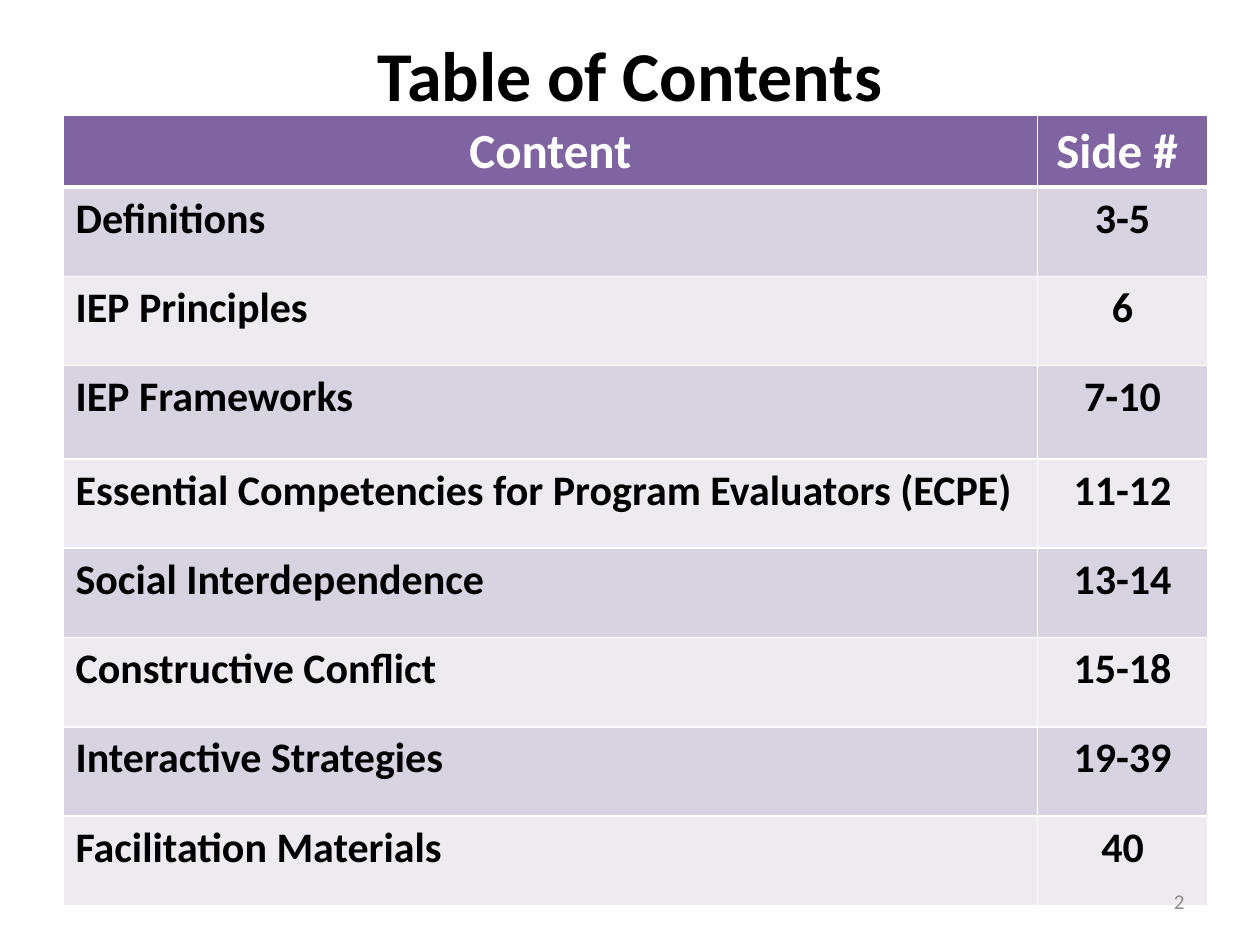
from pptx import Presentation
from pptx.dml.color import RGBColor
from pptx.enum.text import MSO_ANCHOR as Anchor, PP_ALIGN as Align
from pptx.util import Cm, Pt
from lxml.etree import SubElement
from pptx.oxml.ns import qn

# Content
TITLE = "Table of Contents"
PAGE_NUMBER = "2"
HEADER = ("Content", "Side # ")
ENTRIES = [
    ("Definitions", "3-5"),
    ("IEP Principles", "6"),
    ("IEP Frameworks", "7-10"),
    ("Essential Competencies for Program Evaluators (ECPE)", "11-12"),
    ("Social Interdependence", "13-14"),
    ("Constructive Conflict", "15-18"),
    ("Interactive Strategies", "19-39"),
    ("Facilitation Materials", "40"),
]

# Look
COLORS = {"black": "000000", "white": "FFFFFF", "gray": "8C8C8C",
          "header": "8064A2", "odd": "D8D3E0", "even": "EDEAF0"}
FORMATS = {
    "title": {"size": Pt(40), "bold": True, "color": "black"},
    "header": {"size": Pt(28), "bold": True, "color": "white"},
    "entry": {"size": Pt(24), "bold": True, "color": "black"},
    "number": {"size": Pt(12), "bold": False, "color": "gray"},
}
COLUMN_WIDTHS = (19.65, 3.42)
HEADER_HEIGHT, ENTRY_HEIGHT, TALL_HEIGHT = 1.43, 1.8, 1.88
TALL_ROW = 3


def rgb(name):
    return RGBColor.from_string(COLORS[name])


def write(frame, text, style, align):
    para = frame.paragraphs[0]
    para.alignment = align
    span = para.add_run()
    span.text = text
    span.font.name = "Calibri"
    for key, value in FORMATS[style].items():
        if key == "color":
            span.font.color.rgb = rgb(value)
        else:
            setattr(span.font, key, value)


def add_text(page, place, text, style, align):
    box = page.shapes.add_textbox(*map(Cm, place))
    box.text_frame.word_wrap = True
    box.text_frame.vertical_anchor = Anchor.MIDDLE
    write(box.text_frame, text, style, align)


def set_borders(cell, widths):
    props = cell._tc.get_or_add_tcPr()
    for position, (side, width) in enumerate(widths.items()):
        line = props.makeelement(qn(f"a:{side}"), {"w": str(Pt(width))})
        fill = SubElement(line, qn("a:solidFill"))
        SubElement(fill, qn("a:srgbClr"), val=COLORS["white"])
        props.insert(position, line)  # borders come before the fill


def add_contents(page):
    rows = [HEADER, *ENTRIES]
    heights = [HEADER_HEIGHT] + [ENTRY_HEIGHT] * len(ENTRIES)
    heights[TALL_ROW] = TALL_HEIGHT
    table = page.shapes.add_table(
        len(rows), len(HEADER), Cm(1.27), Cm(2.33),
        Cm(sum(COLUMN_WIDTHS)), Cm(sum(heights))).table
    for column, width in zip(table.columns, COLUMN_WIDTHS):
        column.width = Cm(width)

    for r, texts in enumerate(rows):
        table.rows[r].height = Cm(heights[r])
        style = "entry" if r else "header"
        shade = ("even", "odd")[r % 2] if r else "header"
        for c, text in enumerate(texts):
            cell = table.cell(r, c)
            cell.fill.solid()
            cell.fill.fore_color.rgb = rgb(shade)
            set_borders(cell, {"lnL": 1, "lnR": 1,
                               "lnT": 3 if r == 1 else 1,
                               "lnB": 1 if r else 3})
            align = Align.LEFT if r and c == 0 else Align.CENTER
            write(cell.text_frame, text, style, align)


def main():
    deck = Presentation()
    deck.slide_width, deck.slide_height = Cm(25.4), Cm(19.05)
    page = deck.slides.add_slide(deck.slide_layouts[6])

    # Title, table, page number
    add_text(page, (1.27, 0.43, 22.86, 2.11), TITLE, "title", Align.CENTER)
    add_contents(page)
    add_text(page, (18.2, 17.66, 5.93, 1.01), PAGE_NUMBER, "number", Align.RIGHT)
    deck.save("out.pptx")


if __name__ == "__main__":
    main()
